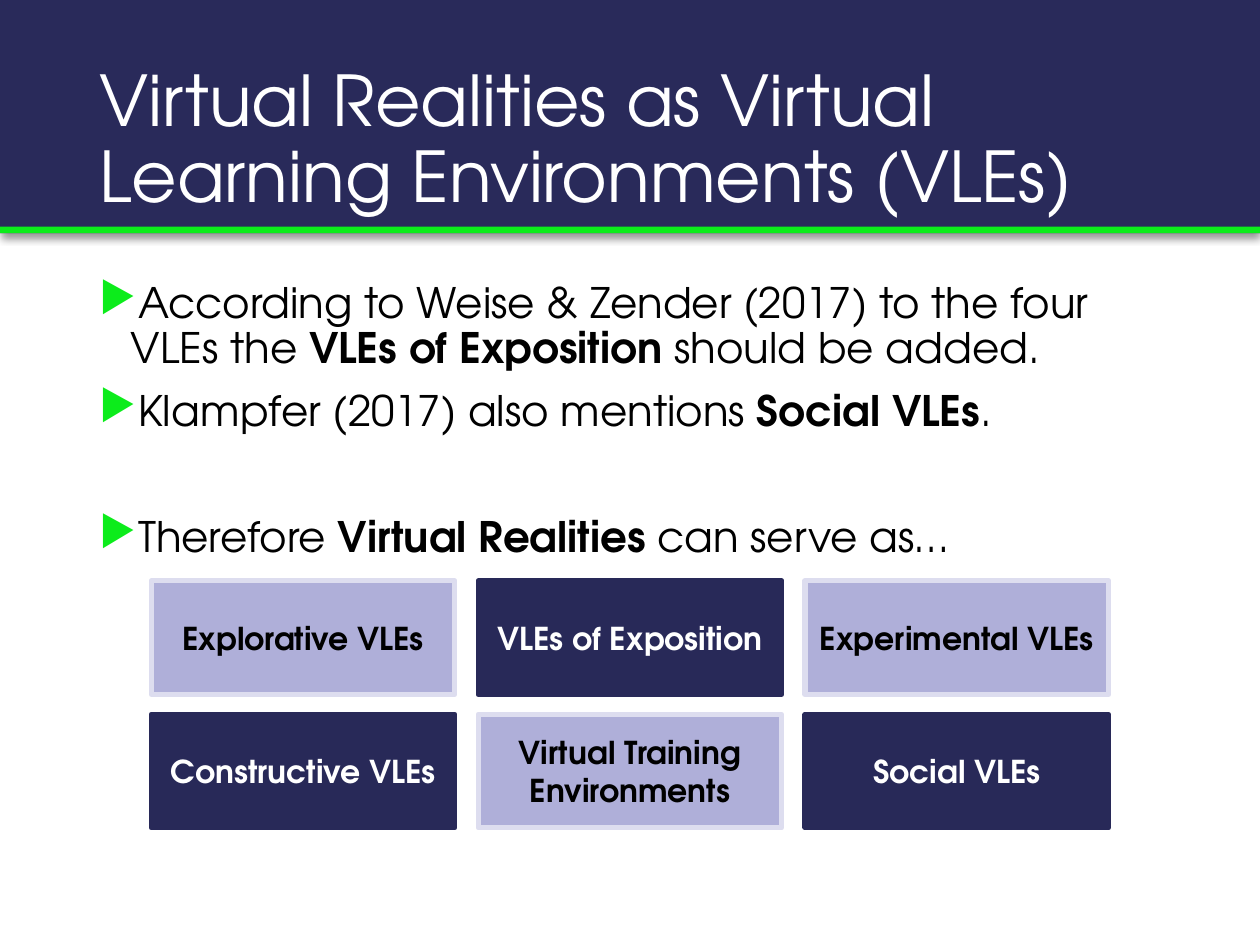
from dataclasses import dataclass

from lxml import etree
from pptx import Presentation, util as u
from pptx.dml.color import RGBColor
from pptx.enum import shapes, text
from pptx.oxml import ns

FONT = "TeX Gyre Adventor"
NAVY = RGBColor(0x29, 0x2A, 0x5A)
DARK = RGBColor(0x28, 0x29, 0x58)
LAVENDER = RGBColor(0xAF, 0xAF, 0xD9)
PALE = RGBColor(0xDD, 0xDD, 0xEF)
GREEN = RGBColor(0x0C, 0xEC, 0x1B)
WHITE = RGBColor(0xFF, 0xFF, 0xFF)
BLACK = RGBColor(0, 0, 0)

SLIDE_WIDTH = u.Cm(25.4)
TILE_LEFT, TILE_TOP = 3.05, 11.71
TILE_WIDTH, TILE_HEIGHT = 6.12, 2.29
COLUMN_STEP, ROW_STEP = 6.59, 2.69
COLUMNS = 3


@dataclass
class Bullet:
    before: str
    strong: str
    after: str
    space: int


@dataclass
class TileStyle:
    fill: RGBColor
    line: RGBColor
    font: RGBColor


LIGHT_TILE = TileStyle(LAVENDER, PALE, BLACK)
DARK_TILE = TileStyle(DARK, DARK, WHITE)

BULLETS = [
    Bullet("According to Weise & Zender (2017) to the four VLEs the ",
           "VLEs of Exposition ", "should be added.", 0),
    Bullet("Klampfer (2017) also mentions ", "Social VLEs", ".", 10),
    Bullet("Therefore ", "Virtual Realities ", "can serve as…", 46),
]
TILES = ["Explorative VLEs", "VLEs of Exposition", "Experimental VLEs",
         "Constructive VLEs", "Virtual Training Environments", "Social VLEs"]


def style_font(font, size: int, color: RGBColor, bold: bool = False) -> None:
    font.name = FONT
    font.size = u.Pt(size)
    font.bold = bold
    font.color.rgb = color


def add_box(page, left, top, width, height, fill: RGBColor):
    box = page.shapes.add_shape(shapes.MSO_SHAPE.RECTANGLE, left, top, width, height)
    box.shadow.inherit = False
    box.fill.solid()
    box.fill.fore_color.rgb = fill
    box.line.fill.background()
    return box


def add_shadow(box) -> None:
    effects = box.element.spPr.find(ns.qn("a:effectLst"))
    shadow = etree.SubElement(effects, ns.qn("a:outerShdw"), blurRad=str(u.Pt(4)),
                              dist=str(u.Pt(3)), dir="5400000", algn="t", rotWithShape="0")
    color = etree.SubElement(shadow, ns.qn("a:srgbClr"), val=str(BLACK))
    etree.SubElement(color, ns.qn("a:alpha"), val="40000")


def add_header(page) -> None:
    title = page.shapes.title
    banner = add_box(page, 0, 0, SLIDE_WIDTH, u.Cm(4.7), NAVY)
    add_shadow(banner)
    stripe = add_box(page, 0, u.Cm(4.57), SLIDE_WIDTH, u.Cm(0.13), GREEN)
    for box in (banner, stripe):
        title.element.addprevious(box.element)

    title.left, title.top = u.Cm(1.75), u.Cm(1.02)
    title.width, title.height = u.Cm(21.9), u.Cm(3.68)
    frame = title.text_frame
    frame.text = "Virtual Realities as Virtual Learning Environments (VLEs)"
    frame.auto_size = text.MSO_AUTO_SIZE.NONE
    frame.vertical_anchor = text.MSO_ANCHOR.MIDDLE
    para = frame.paragraphs[0]
    para.alignment = text.PP_ALIGN.LEFT
    para.line_spacing = 0.9
    style_font(para.runs[0].font, 40, WHITE)


def add_bullet_mark(para) -> None:
    props = para._p.get_or_add_pPr()
    props.set("marL", str(u.Cm(0.64)))
    props.set("indent", str(u.Cm(-0.64)))
    color = etree.SubElement(props, ns.qn("a:buClr"))
    etree.SubElement(color, ns.qn("a:srgbClr"), val=str(GREEN))
    etree.SubElement(props, ns.qn("a:buChar"), char="▶")


def add_bullets(page, bullets: list[Bullet]) -> None:
    box = page.shapes.add_textbox(u.Cm(1.75), u.Cm(5.56), u.Cm(21.9), u.Cm(12.09))
    frame = box.text_frame
    frame.word_wrap = True
    for index, bullet in enumerate(bullets):
        para = frame.add_paragraph() if index else frame.paragraphs[0]
        add_bullet_mark(para)
        para.line_spacing = 0.9
        para.space_before = u.Pt(bullet.space)
        for words in (bullet.before, bullet.strong, bullet.after):
            span = para.add_run()
            span.text = words
            style_font(span.font, 24, BLACK, words == bullet.strong)


def add_tile(page, index: int, label: str) -> None:
    row, column = divmod(index, COLUMNS)
    style = DARK_TILE if index % 2 else LIGHT_TILE
    box = add_box(page, u.Cm(TILE_LEFT + column * COLUMN_STEP), u.Cm(TILE_TOP + row * ROW_STEP),
                  u.Cm(TILE_WIDTH), u.Cm(TILE_HEIGHT), style.fill)
    box.line.color.rgb = style.line
    box.line.width = u.Pt(3)
    frame = box.text_frame
    frame.text = label
    frame.word_wrap = True
    frame.vertical_anchor = text.MSO_ANCHOR.MIDDLE
    para = frame.paragraphs[0]
    para.alignment = text.PP_ALIGN.CENTER
    style_font(para.runs[0].font, 18, style.font, True)


def main() -> None:
    deck = Presentation()
    deck.slide_width, deck.slide_height = SLIDE_WIDTH, u.Cm(19.05)
    page = deck.slides.add_slide(deck.slide_layouts[5])
    add_header(page)
    add_bullets(page, BULLETS)
    for index, label in enumerate(TILES):
        add_tile(page, index, label)
    deck.save("out.pptx")


if __name__ == "__main__":
    main()
